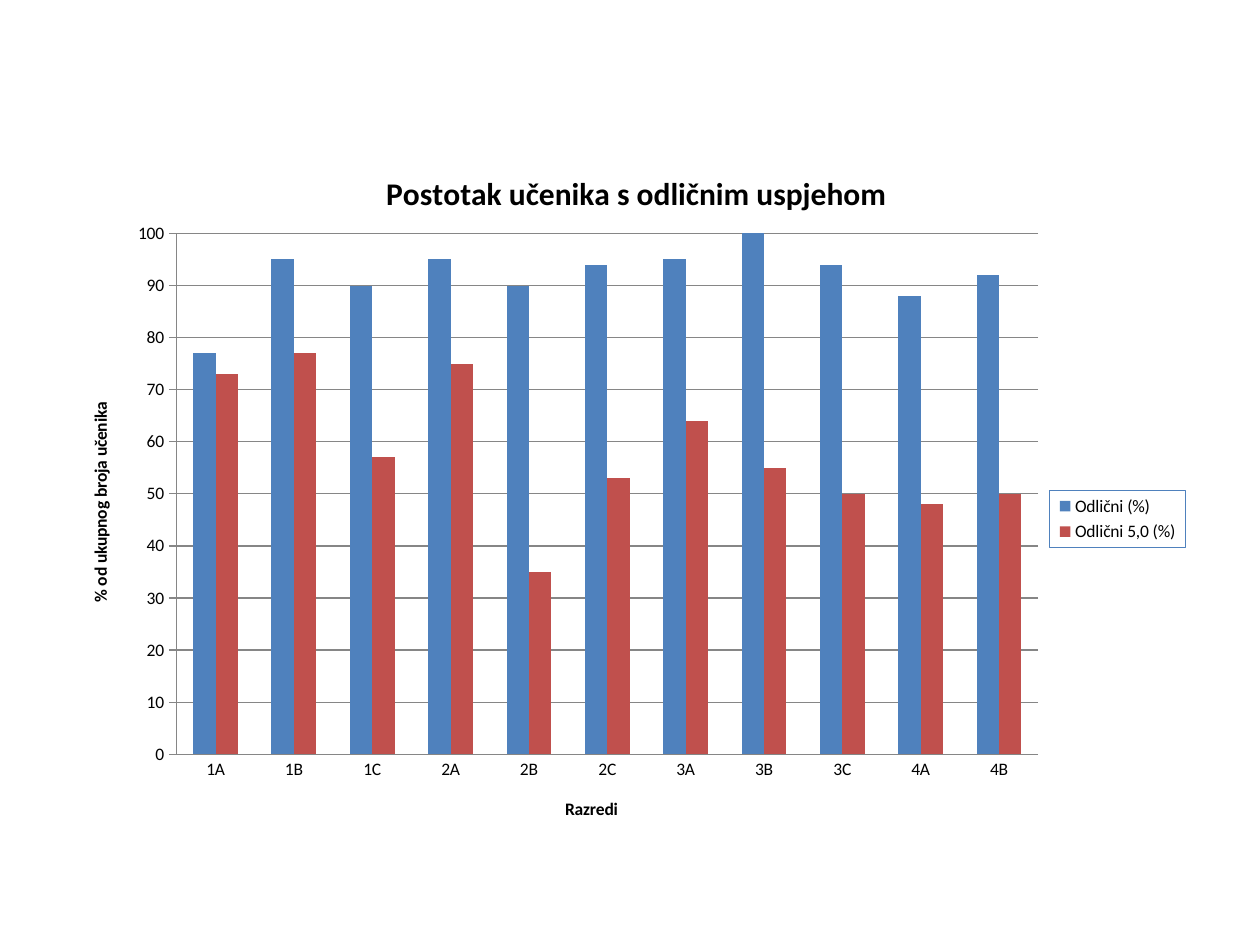
from dataclasses import dataclass

from lxml import etree
from pptx import Presentation
from pptx.chart.data import CategoryChartData
from pptx.dml.color import RGBColor
from pptx.enum.chart import XL_CHART_TYPE, XL_LEGEND_POSITION, XL_TICK_MARK
from pptx.oxml.ns import qn
from pptx.util import Inches, Pt

CLUSTERED = XL_CHART_TYPE.COLUMN_CLUSTERED
RIGHT = XL_LEGEND_POSITION.RIGHT
NO_TICK = XL_TICK_MARK.NONE
OUTSIDE = XL_TICK_MARK.OUTSIDE
FONT = "Calibri"
BLACK, GREY, BLUE, RED = "000000", "868686", "4F81BD", "C0504D"


@dataclass(frozen=True)
class GradeSeries:
    name: str
    values: tuple[int, ...]
    color: str


CLASSES = ("1A", "1B", "1C", "2A", "2B", "2C", "3A", "3B", "3C", "4A", "4B")
GRADES = (
    GradeSeries("Odlični (%)", (77, 95, 90, 95, 90, 94, 95, 100, 94, 88, 92), BLUE),
    GradeSeries("Odlični 5,0 (%)", (73, 77, 57, 75, 35, 53, 64, 55, 50, 48, 50), RED),
)


def rgb(color: str) -> RGBColor:
    return RGBColor.from_string(color)


def style_font(font, size: float, bold: bool = False) -> None:
    font.name = FONT
    font.size = Pt(size)
    font.bold = bold
    font.color.rgb = rgb(BLACK)


def style_line(line, color: str) -> None:
    line.color.rgb = rgb(color)
    line.width = Pt(0.75)


def write_title(title, text: str, size: float) -> None:
    run = title.text_frame.paragraphs[0].add_run()
    run.text = text
    style_font(run.font, size, bold=True)


def place(element, index: int, inner: bool = False, **fractions: float) -> None:
    for old in element.findall(qn("c:layout")):
        element.remove(old)
    layout = etree.Element(qn("c:layout"))
    manual = etree.SubElement(layout, qn("c:manualLayout"))
    settings = {"layoutTarget": "inner"} if inner else {}
    settings |= {"xMode": "edge", "yMode": "edge"} | fractions
    for tag, value in settings.items():
        etree.SubElement(manual, qn(f"c:{tag}")).set("val", str(value))
    element.insert(index, layout)


def style_axes(chart) -> None:
    classes, percent = chart.category_axis, chart.value_axis
    for axis, tick in ((classes, NO_TICK), (percent, OUTSIDE)):
        axis.major_tick_mark = tick
        axis.minor_tick_mark = NO_TICK
        style_font(axis.tick_labels.font, 10)
        style_line(axis.format.line, GREY)
    percent.minimum_scale = 0
    percent.maximum_scale = 100
    percent.major_unit = 10
    percent.has_major_gridlines = True
    style_line(percent.major_gridlines.format.line, GREY)
    percent.tick_labels.number_format = "General"
    percent.tick_labels.number_format_is_linked = False

    write_title(classes.axis_title, "Razredi", 10)
    place(classes.axis_title._element, 1, x=0.44, y=0.93)
    write_title(percent.axis_title, "% od ukupnog broja učenika", 10)
    body = percent.axis_title.text_frame._txBody.find(qn("a:bodyPr"))
    body.set("rot", "-5400000")
    body.set("vert", "horz")
    place(percent.axis_title._element, 1, x=0.02, y=0.37)


def add_grades_chart(slide) -> None:
    data = CategoryChartData()
    data.categories = CLASSES
    for grade in GRADES:
        data.add_series(grade.name, grade.values)
    chart = slide.shapes.add_chart(
        CLUSTERED, Inches(0.5), Inches(1.09), Inches(9), Inches(5.61), data
    ).chart
    style_font(chart.font, 10)

    chart.has_title = True
    write_title(chart.chart_title, "Postotak učenika s odličnim uspjehom", 18)
    place(chart.chart_title._element, 1, x=0.28, y=0.04)

    bars = chart.plots[0]
    bars.vary_by_categories = False
    bars.gap_width = 150
    bars.overlap = 0
    for series, grade in zip(bars.series, GRADES):
        series.format.fill.solid()
        series.format.fill.fore_color.rgb = rgb(grade.color)
    plot_area = chart._chartSpace.chart.plotArea
    place(plot_area, 0, inner=True, x=0.1, y=0.136, w=0.76, h=0.737)

    style_axes(chart)

    chart.has_legend = True
    legend = chart.legend
    legend.position = RIGHT
    legend.include_in_layout = False
    style_font(legend.font, 10)
    place(legend._element, 1, x=0.87, y=0.5, w=0.12, h=0.08)
    border = etree.Element(qn("c:spPr"))
    line = etree.SubElement(border, qn("a:ln"), w=str(Pt(0.75)))
    fill = etree.SubElement(line, qn("a:solidFill"))
    etree.SubElement(fill, qn("a:srgbClr"), val=BLUE)
    legend._element.find(qn("c:txPr")).addprevious(border)


def main() -> None:
    presentation = Presentation()
    presentation.slide_width = Inches(10)
    presentation.slide_height = Inches(7.5)
    slide = presentation.slides.add_slide(presentation.slide_layouts[6])
    add_grades_chart(slide)
    presentation.save("out.pptx")


if __name__ == "__main__":
    main()
